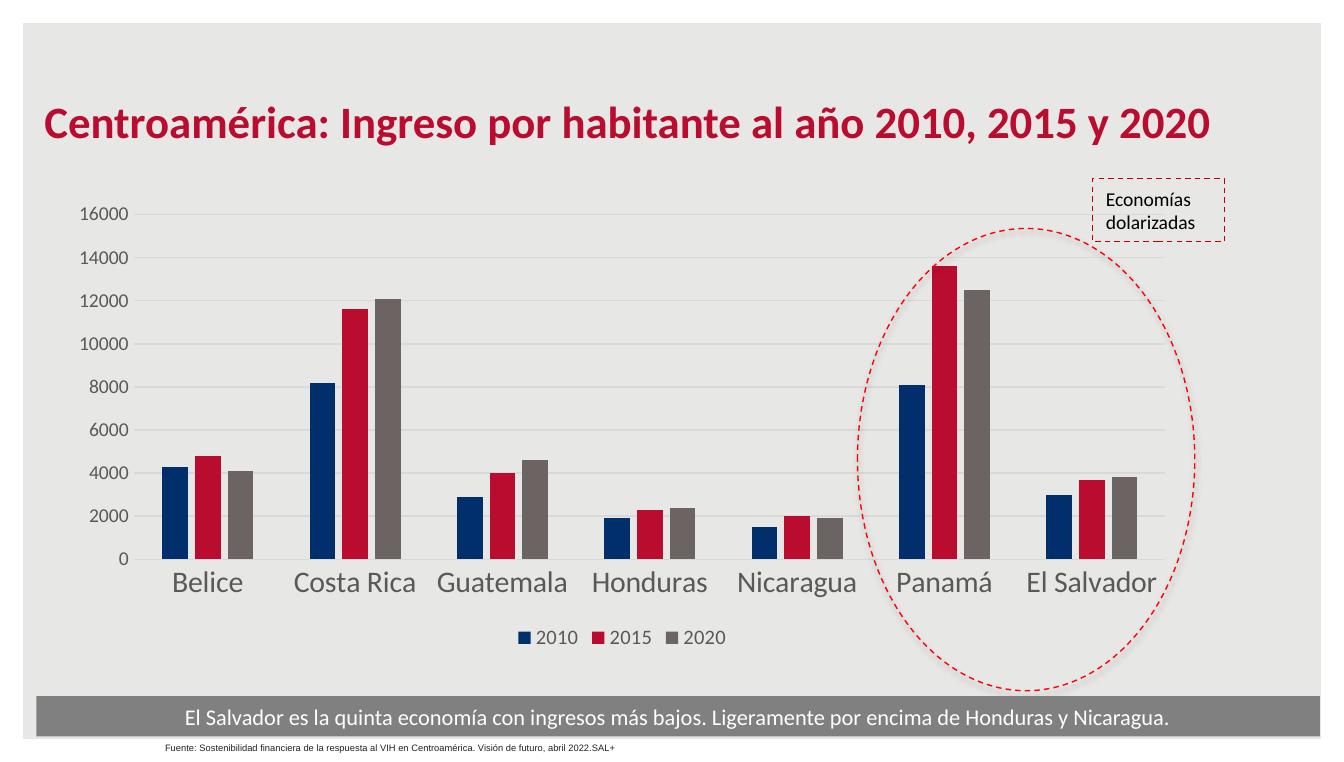
"""Build a slide comparing income per inhabitant across Central America."""
from lxml import etree
from pptx import Presentation
from pptx.chart.data import CategoryChartData
from pptx.dml.color import RGBColor
from pptx.enum.chart import XL_CHART_TYPE, XL_LEGEND_POSITION, XL_TICK_MARK
from pptx.enum.dml import MSO_LINE
from pptx.enum.shapes import MSO_SHAPE
from pptx.enum.text import MSO_ANCHOR, PP_ALIGN
from pptx.oxml import parse_xml
from pptx.util import Inches, Pt

COLUMNS = XL_CHART_TYPE.COLUMN_CLUSTERED
BOTTOM = XL_LEGEND_POSITION.BOTTOM
NO_TICK = XL_TICK_MARK.NONE
DASH = MSO_LINE.DASH
FRAME, OVAL, RECT = MSO_SHAPE.FRAME, MSO_SHAPE.OVAL, MSO_SHAPE.RECTANGLE
LEFT, CENTER = PP_ALIGN.LEFT, PP_ALIGN.CENTER
MIDDLE, LOW = MSO_ANCHOR.MIDDLE, MSO_ANCHOR.BOTTOM
DRAW = "http://schemas.openxmlformats.org/drawingml/2006/main"

WIDE, HIGH = 10, 5.67
COLORS = {
    "back": "E7E7E5", "white": "FFFFFF", "black": "000000", "red": "BA0C2F",
    "navy": "002F6C", "taupe": "6C6463", "grid": "D9D9D9", "label": "595959",
    "ring": "FF0000", "edge": "C00000", "band": "808080", "ink": "202124",
}
TITLE = "Centroamérica: Ingreso por habitante al año 2010, 2015 y 2020"
NOTE = "Economías dolarizadas"
CLAIM = ("El Salvador es la quinta economía con ingresos más bajos. "
         "Ligeramente por encima de Honduras y Nicaragua.")
SOURCE = ("Fuente: Sostenibilidad financiera de la respuesta al VIH en "
          "Centroamérica. Visión de futuro, abril 2022.SAL+")
LANDS = ["Belice", "Costa Rica", "Guatemala", "Honduras", "Nicaragua",
         "Panamá", "El Salvador"]
YEARS = [
    ("2010", "navy", [4300, 8200, 2900, 1900, 1500, 8100, 3000]),
    ("2015", "red", [4800, 11600, 4000, 2300, 2000, 13600, 3700]),
    ("2020", "taupe", [4100, 12100, 4600, 2400, 1900, 12500, 3800]),
]
PLACES = {
    "frame": (0, 0, WIDE, HIGH), "title": (0.23, 0.19, 9.55, 0.96),
    "chart": (0.42, 1.44, 8.42, 3.44), "ring": (6.38, 1.7, 2.51, 3.44),
    "note": (8.13, 1.33, 0.98, 0.47), "claim": (0.27, 5.18, 9.55, 0.3),
    "source": (1.13, 5.47, 8.54, 0.19),
}


def rgb(name):
    return RGBColor.from_string(COLORS[name])


def spot(name):
    return [Inches(n) for n in PLACES[name]]


def style(font, size, color, face="Calibri", bold=False):
    font.size, font.name, font.bold = Pt(size), face, bold
    font.color.rgb = rgb(color)


def write(shape, text, size, color, align=LEFT, anchor=MIDDLE,
          face="Calibri", bold=False):
    frame = shape.text_frame
    frame.word_wrap, frame.vertical_anchor = True, anchor
    frame.text = text
    para = frame.paragraphs[0]
    para.alignment = align
    style(para.font, size, color, face, bold)


def add_form(slide, kind, name, fill=None, edge=None):
    shape = slide.shapes.add_shape(kind, *spot(name))
    shape.shadow.inherit = False
    if fill:
        shape.fill.solid()
        shape.fill.fore_color.rgb = rgb(fill)
    else:
        shape.fill.background()
    if edge:
        shape.line.color.rgb = rgb(edge)
        shape.line.width, shape.line.dash_style = Pt(0.75), DASH
    else:
        shape.line.fill.background()
    return shape


def add_shade(shape):
    effects = shape.element.spPr.find(f"{{{DRAW}}}effectLst")
    shade = etree.SubElement(effects, f"{{{DRAW}}}outerShdw", blurRad=str(Pt(3.1)),
                             dist=str(Pt(1.8)), dir="5400000", rotWithShape="0")
    shade.append(parse_xml(f'<a:srgbClr xmlns:a="{DRAW}" val="{COLORS["black"]}">'
                           '<a:alpha val="35000"/></a:srgbClr>'))


def rule(line):
    line.color.rgb, line.width = rgb("grid"), Pt(0.75)


def add_bars(slide):
    data = CategoryChartData()
    data.categories = LANDS
    for year, _, sums in YEARS:
        data.add_series(year, sums)
    chart = slide.shapes.add_chart(COLUMNS, *spot("chart"), data).chart
    style(chart.font, 16, "black")
    chart.has_title = False
    chart.has_legend = True
    chart.legend.position, chart.legend.include_in_layout = BOTTOM, False
    style(chart.legend.font, 11, "label")
    plot = chart.plots[0]
    plot.gap_width, plot.overlap, plot.vary_by_categories = 219, -27, False
    for bars, (_, color, _) in zip(plot.series, YEARS):
        bars.format.fill.solid()
        bars.format.fill.fore_color.rgb = rgb(color)
        bars.invert_if_negative = False
    lands, sums = chart.category_axis, chart.value_axis
    for axis, size in ((lands, 16), (sums, 10.5)):
        axis.major_tick_mark = axis.minor_tick_mark = NO_TICK
        style(axis.tick_labels.font, size, "label")
    rule(lands.format.line)
    sums.format.line.fill.background()
    sums.minimum_scale, sums.maximum_scale, sums.major_unit = 0, 16000, 2000
    rule(sums.major_gridlines.format.line)


def main():
    deck = Presentation()
    deck.slide_width, deck.slide_height = Inches(WIDE), Inches(HIGH)
    slide = deck.slides.add_slide(deck.slide_layouts[5])
    slide.background.fill.solid()
    slide.background.fill.fore_color.rgb = rgb("back")
    border = add_form(slide, FRAME, "frame", "white")
    border.adjustments[0] = 0.03
    slide.shapes.element.insert(2, border.element)
    title = slide.shapes.title
    title.left, title.top, title.width, title.height = spot("title")
    write(title, TITLE, 24, "red", anchor=LOW, bold=True)
    add_bars(slide)
    add_shade(add_form(slide, OVAL, "ring", edge="ring"))
    write(add_form(slide, RECT, "note", edge="edge"), NOTE, 10.5, "black")
    write(add_form(slide, RECT, "claim", "band"), CLAIM, 12, "white", CENTER)
    source = slide.shapes.add_textbox(*spot("source"))
    write(source, SOURCE, 5, "ink", face="Arial")
    deck.save("out.pptx")


if __name__ == "__main__":
    main()
